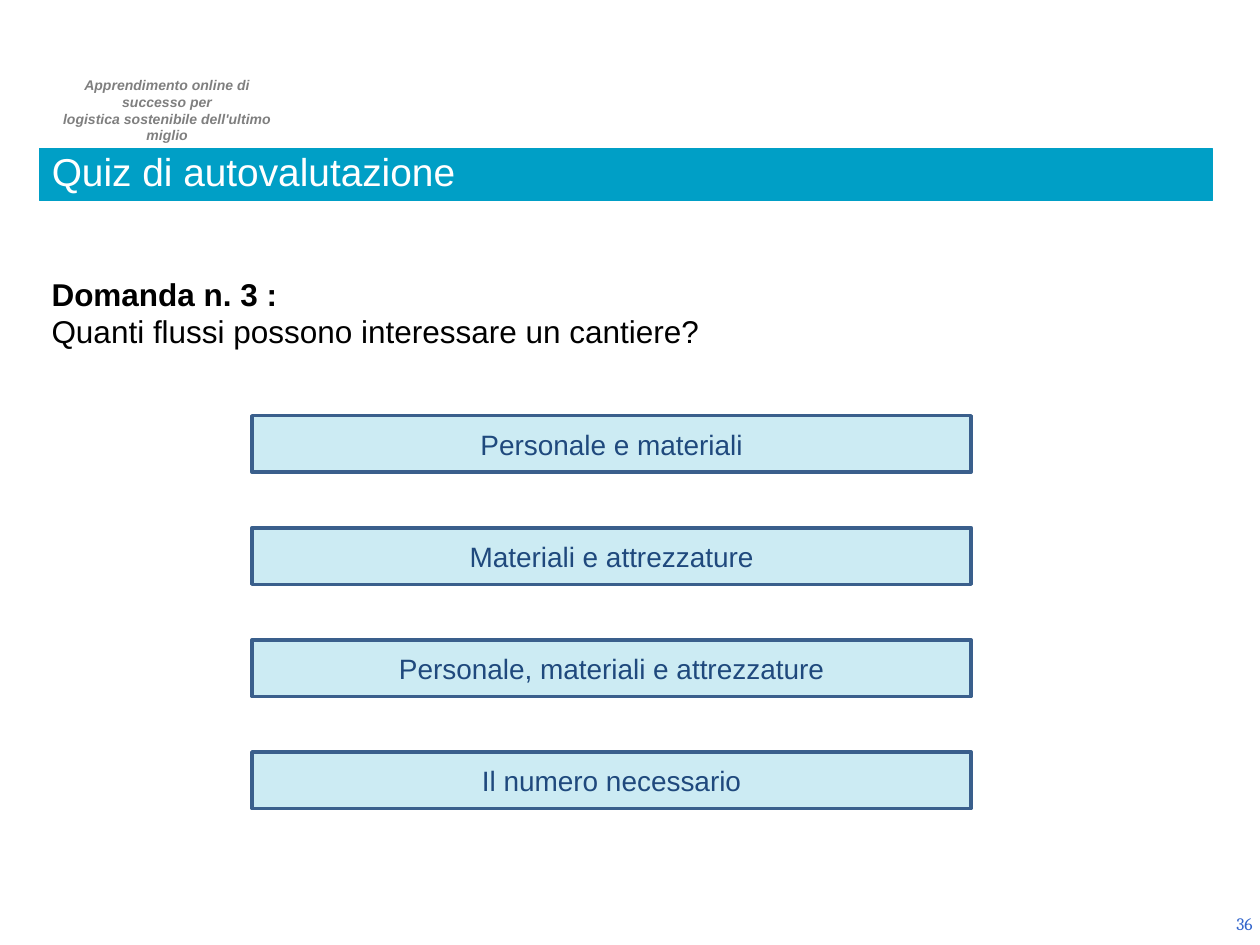
from dataclasses import dataclass

from lxml import etree
from pptx import Presentation
from pptx.dml.color import RGBColor
from pptx.enum.shapes import MSO_SHAPE
from pptx.enum.text import MSO_ANCHOR, MSO_AUTO_SIZE, PP_ALIGN
from pptx.oxml.ns import qn
from pptx.util import Cm, Pt

RECT = MSO_SHAPE.RECTANGLE
LEFT, CENTER, RIGHT = PP_ALIGN.LEFT, PP_ALIGN.CENTER, PP_ALIGN.RIGHT
JUSTIFY = PP_ALIGN.JUSTIFY
TOP, MIDDLE, BOTTOM = MSO_ANCHOR.TOP, MSO_ANCHOR.MIDDLE, MSO_ANCHOR.BOTTOM
FIXED = MSO_AUTO_SIZE.NONE

COLORS = {
    "band": "009FC6",
    "edge": "3A5F8C",
    "answer": "1F497D",
    "motto": "7F7F7F",
    "number": "3366CC",
    "white": "FFFFFF",
    "black": "000000",
}

ANSWERS = [
    "Personale e materiali",
    "Materiali e attrezzature",
    "Personale, materiali e attrezzature",
    "Il numero necessario",
]
FIRST_TOP, STEP = 8.38, 2.26


@dataclass
class Box:
    """Place and size in centimetres."""
    left: float
    top: float
    width: float
    height: float

    def lengths(self) -> tuple:
        return Cm(self.left), Cm(self.top), Cm(self.width), Cm(self.height)


@dataclass
class Style:
    size: float
    color: str
    align: PP_ALIGN = LEFT
    bold: bool = False
    italic: bool = False
    face: str = "Arial"


def paint(shape, fill: str, line: str, width: float) -> None:
    shape.fill.solid()
    shape.fill.fore_color.rgb = RGBColor.from_string(COLORS[fill])
    shape.line.color.rgb = RGBColor.from_string(COLORS[line])
    shape.line.width = Pt(width)


def fade(shape, percent: int) -> None:
    """Set the opacity of a solid fill."""
    color = shape.fill._xPr.find(qn("a:solidFill")).find(qn("a:srgbClr"))
    etree.SubElement(color, qn("a:alpha"), val=str(percent * 1000))


def write(shape, lines: list[tuple[str, Style]], anchor: MSO_ANCHOR) -> None:
    frame = shape.text_frame
    frame.auto_size = FIXED
    frame.word_wrap = True
    frame.vertical_anchor = anchor
    frame.text = "\n".join(text for text, _ in lines)
    for para, (_, style) in zip(frame.paragraphs, lines):
        para.alignment = style.align
        font = para.font
        font.name = style.face
        font.size = Pt(style.size)
        font.bold = style.bold
        font.italic = style.italic
        font.color.rgb = RGBColor.from_string(COLORS[style.color])


def add_text(slide, box: Box, lines: list[tuple[str, Style]],
             anchor: MSO_ANCHOR = TOP) -> None:
    write(slide.shapes.add_textbox(*box.lengths()), lines, anchor)


def add_answer(slide, box: Box, text: str) -> None:
    shape = slide.shapes.add_shape(RECT, *box.lengths())
    shape.shadow.inherit = False
    paint(shape, "band", "edge", 2)
    fade(shape, 20)
    write(shape, [(text, Style(16, "answer", CENTER))], MIDDLE)


def set_title(slide, box: Box, text: str) -> None:
    title = slide.shapes.title
    title.left, title.top, title.width, title.height = box.lengths()
    paint(title, "band", "band", 0.75)
    write(title, [(text, Style(22.2, "white"))], BOTTOM)
    title.text_frame.paragraphs[0].line_spacing = 0.8


def main() -> None:
    deck = Presentation()
    deck.slide_width, deck.slide_height = Cm(25.4), Cm(19.05)
    slide = deck.slides.add_slide(deck.slide_layouts[5])

    motto = Style(8, "motto", CENTER, bold=True, italic=True)
    add_text(slide, Box(0.79, 1.42, 5.16, 0.94), [
        ("Apprendimento online di successo per", motto),
        ("logistica sostenibile dell'ultimo miglio", motto),
    ])
    set_title(slide, Box(0.79, 3, 23.65, 1.04), "Quiz di autovalutazione")
    add_text(slide, Box(0.79, 5.41, 23.65, 1.8), [
        ("Domanda n. 3 :", Style(18, "black", bold=True)),
        ("Quanti flussi possono interessare un cantiere?",
         Style(18, "black", JUSTIFY)),
    ])
    for row, text in enumerate(ANSWERS):
        add_answer(slide, Box(5.08, FIRST_TOP + row * STEP, 14.5, 1.14), text)
    add_text(slide, Box(19.58, 18.11, 5.92, 1.02),
             [("36", Style(10, "number", RIGHT, face="Cambria"))], MIDDLE)

    deck.save("out.pptx")


if __name__ == "__main__":
    main()
